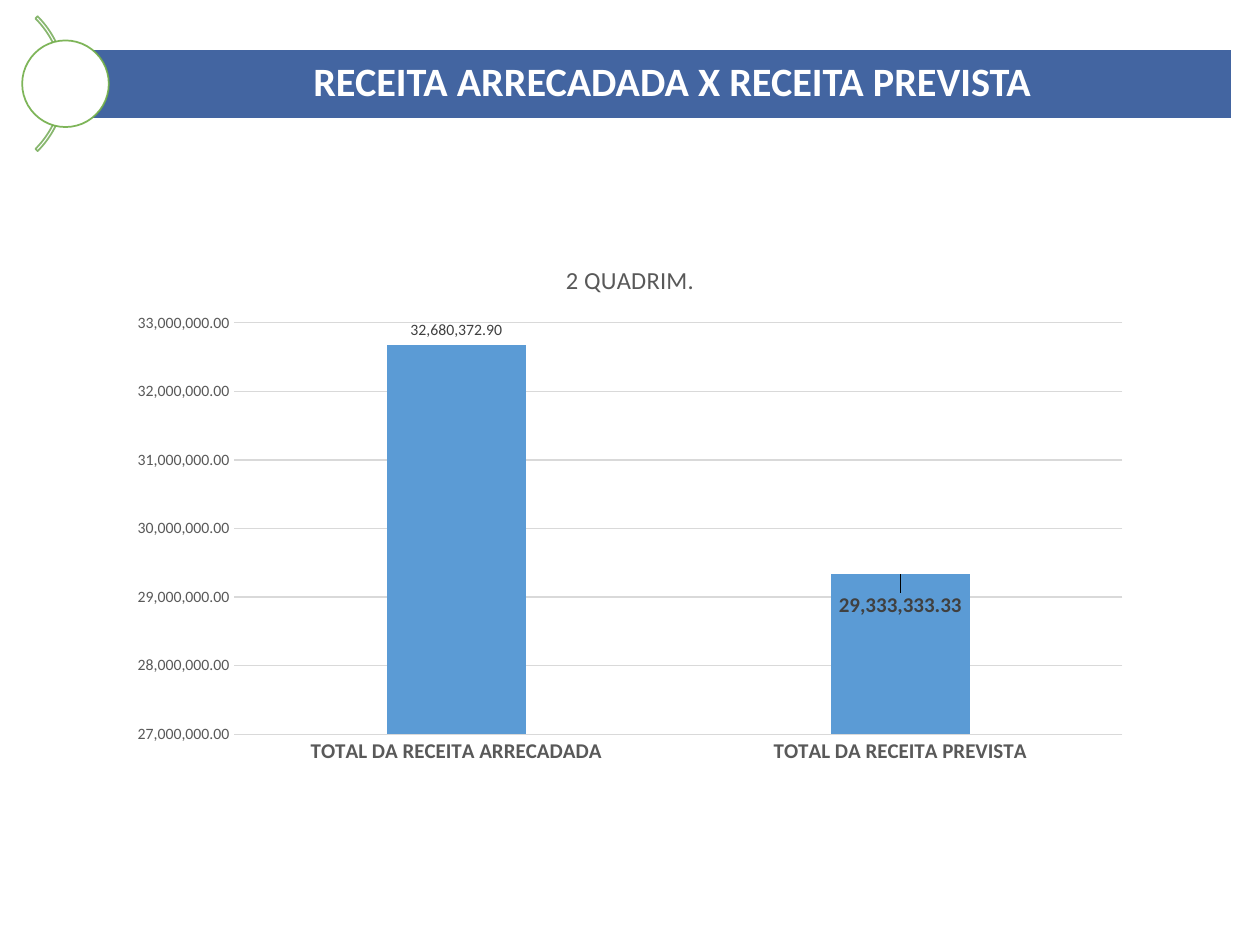
from lxml.etree import SubElement
from pptx import Presentation
from pptx.chart.data import CategoryChartData
from pptx.dml.color import RGBColor
from pptx.enum.chart import XL_CHART_TYPE, XL_LABEL_POSITION, XL_TICK_MARK
from pptx.enum.shapes import MSO_SHAPE
from pptx.enum.text import MSO_ANCHOR, MSO_AUTO_SIZE, PP_ALIGN
from pptx.oxml import parse_xml
from pptx.oxml.ns import nsdecls, qn
from pptx.util import Inches, Pt

COLORS = {
    "banner": "2F5597", "white": "FFFFFF", "arc": "88B76F", "circle": "70AD47",
    "bar": "5B9BD5", "grid": "D9D9D9", "axis": "595959", "label": "404040",
}
FONT = "Calibri"
NUMBER_FORMAT = "#,##0.00"
SERIES_NAME = "2 QUADRIM."
RECEITAS = {
    "TOTAL DA RECEITA ARRECADADA": 32680372.90,
    "TOTAL DA RECEITA PREVISTA": 29333333.33,
}


def rgb(name):
    return RGBColor.from_string(COLORS[name])


def set_font(font, size, color, bold=False):
    font.name, font.size, font.bold = FONT, Pt(size), bold
    font.color.rgb = rgb(color)


def set_line(line, color, width):
    line.color.rgb = rgb(color)
    line.width = Pt(width)


def set_alpha(parent, percent):
    """Make the solid fill directly inside an spPr or a:ln element partly transparent."""
    color = parent.find(qn("a:solidFill")).find(qn("a:srgbClr"))
    SubElement(color, qn("a:alpha")).set("val", str(percent * 1000))


def add_header(slide, left, top, width, height):
    """Banner title with a circle and an arc centred on its left end."""
    title = slide.shapes.title
    title.left, title.top, title.width, title.height = left, top, width, height
    title.fill.solid()
    title.fill.fore_color.rgb = rgb("banner")
    set_alpha(title._element.spPr, 90)
    set_line(title.line, "white", 1)

    frame = title.text_frame
    frame.text = "RECEITA ARRECADADA X RECEITA PREVISTA"
    frame.auto_size = MSO_AUTO_SIZE.NONE
    frame.vertical_anchor = MSO_ANCHOR.MIDDLE
    frame.margin_left = Inches(0.44)
    frame.margin_top = frame.margin_right = frame.margin_bottom = Inches(0.06)
    paragraph = frame.paragraphs[0]
    paragraph.alignment = PP_ALIGN.CENTER
    paragraph.line_spacing = 0.9
    set_font(paragraph.font, 23, "white", bold=True)

    middle = top + height // 2
    circle_size = int(height * 1.25)
    arc_size = int(height * 2.75)
    arc = slide.shapes.add_shape(
        MSO_SHAPE.BLOCK_ARC, left - arc_size, middle - arc_size // 2, arc_size, arc_size)
    for index, value in enumerate((189, 27, 0.016)):
        arc.adjustments[index] = value
    arc.fill.background()
    set_line(arc.line, "arc", 1)
    circle = slide.shapes.add_shape(
        MSO_SHAPE.OVAL, left - circle_size // 2, middle - circle_size // 2,
        circle_size, circle_size)
    circle.fill.solid()
    circle.fill.fore_color.rgb = rgb("white")
    set_line(circle.line, "circle", 1)
    set_alpha(circle._element.spPr.find(qn("a:ln")), 90)
    for shape in (arc, circle):
        shape.shadow.inherit = False


def format_axes(chart):
    category_axis, value_axis = chart.category_axis, chart.value_axis
    for axis in (category_axis, value_axis):
        axis.major_tick_mark = axis.minor_tick_mark = XL_TICK_MARK.NONE
    set_font(category_axis.tick_labels.font, 12, "axis", bold=True)
    set_line(category_axis.format.line, "grid", 0.75)
    set_font(value_axis.tick_labels.font, 9, "axis")
    value_axis.tick_labels.number_format = NUMBER_FORMAT
    value_axis.tick_labels.number_format_is_linked = False
    value_axis.minimum_scale, value_axis.maximum_scale = 27e6, 33e6
    value_axis.major_unit = 1e6
    value_axis.format.line.fill.background()
    set_line(value_axis.major_gridlines.format.line, "grid", 0.75)


def format_labels(series):
    """Label both bars; the second label is bold and lowered into its bar."""
    labels = series.data_labels
    labels.show_value = True
    labels.number_format = NUMBER_FORMAT
    labels.number_format_is_linked = False
    labels.position = XL_LABEL_POSITION.OUTSIDE_END
    set_font(labels.font, 9, "label")

    label = series.points[1].data_label
    set_font(label.font, 12, "label", bold=True)
    label.position = XL_LABEL_POSITION.OUTSIDE_END
    index = labels._element.find(qn("c:dLbl")).find(qn("c:idx"))
    index.addnext(parse_xml(
        f'<c:layout {nsdecls("c")}><c:manualLayout>'
        '<c:x val="0"/><c:y val="0.09"/></c:manualLayout></c:layout>'))


def add_revenue_chart(slide, left, top, width, height):
    data = CategoryChartData(number_format=NUMBER_FORMAT)
    data.categories = list(RECEITAS)
    data.add_series(SERIES_NAME, list(RECEITAS.values()))
    chart = slide.shapes.add_chart(
        XL_CHART_TYPE.COLUMN_CLUSTERED, left, top, width, height, data).chart
    chart.has_legend = False
    chart.font.name, chart.font.size = FONT, Pt(10)
    chart.has_title = True
    chart.chart_title.include_in_layout = False
    chart.chart_title.text_frame.text = SERIES_NAME
    set_font(chart.chart_title.text_frame.paragraphs[0].font, 14, "axis")

    plot = chart.plots[0]
    plot.gap_width, plot.overlap, plot.vary_by_categories = 219, -27, False
    series = plot.series[0]
    series.format.fill.solid()
    series.format.fill.fore_color.rgb = rgb("bar")
    format_axes(chart)
    format_labels(series)


def main():
    presentation = Presentation()
    presentation.slide_width, presentation.slide_height = Inches(10), Inches(7.5)
    slide = presentation.slides.add_slide(presentation.slide_layouts[5])
    add_header(slide, Inches(0.52), Inches(0.39), Inches(9.26), Inches(0.55))
    add_revenue_chart(slide, Inches(0.93), Inches(1.91), Inches(8.14), Inches(4.24))
    presentation.save("out.pptx")


if __name__ == "__main__":
    main()
